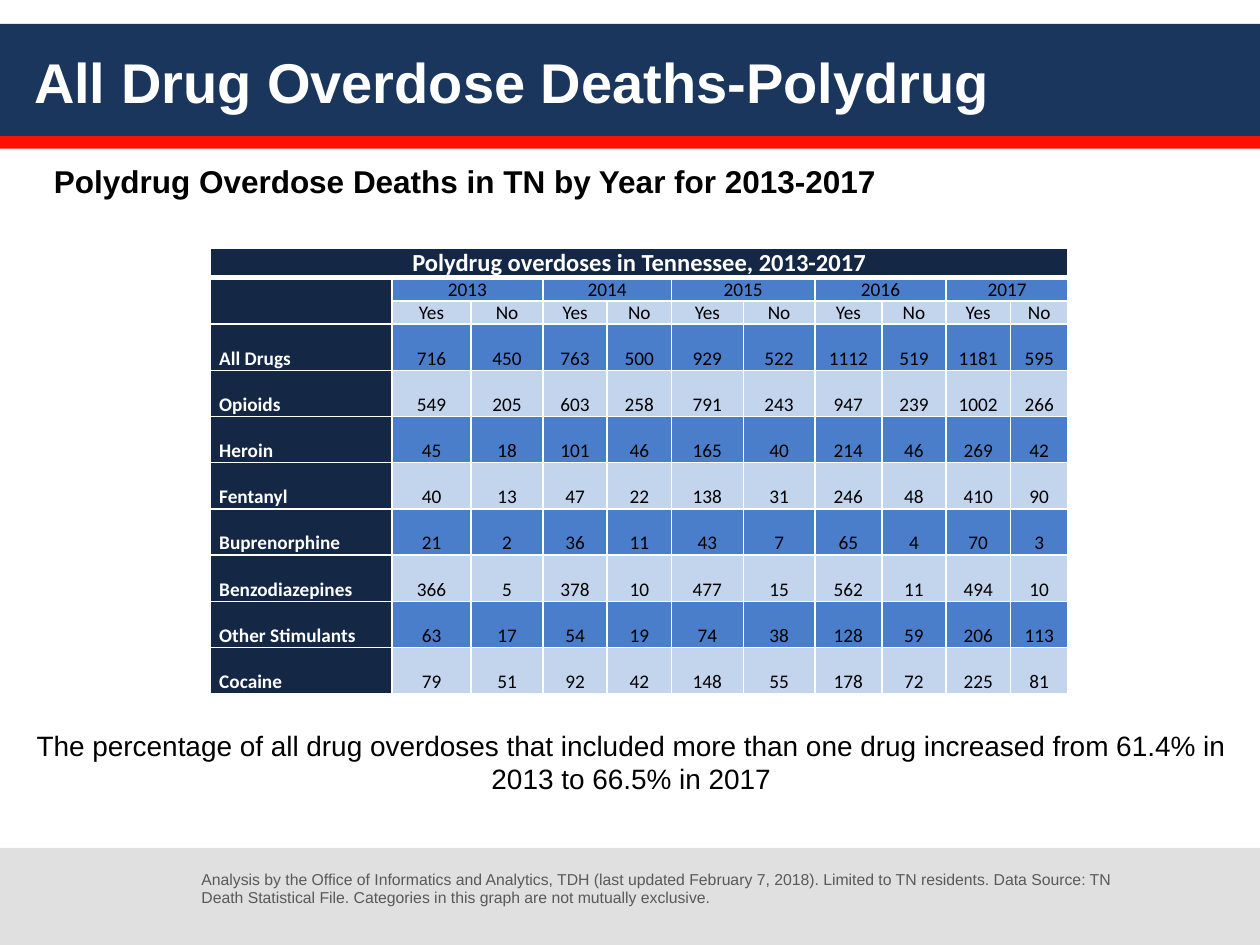
from lxml.etree import SubElement
from pptx import Presentation
from pptx.dml.color import RGBColor
from pptx.enum.shapes import MSO_SHAPE
from pptx.enum.text import MSO_ANCHOR as ANC, MSO_AUTO_SIZE as FIT, PP_ALIGN as AL
from pptx.oxml.ns import qn
from pptx.util import Inches, Pt

NAVY = RGBColor(0x1B, 0x36, 0x5D)
RED = RGBColor(0xFF, 0x0F, 0x00)
PALE = RGBColor(0xE0, 0xE0, 0xE0)
DARK = RGBColor(0x14, 0x28, 0x46)
BLUE = RGBColor(0x4A, 0x7E, 0xCA)
LIGHT = RGBColor(0xC3, 0xD4, 0xED)
GREY = RGBColor(0x59, 0x59, 0x59)
BLACK = RGBColor(0, 0, 0)
WHITE = RGBColor(0xFF, 0xFF, 0xFF)

prs = Presentation()
prs.slide_width, prs.slide_height = Inches(10), Inches(7.5)
COL, ROW = prs.slide_width / 100, prs.slide_height / 75


def box(x, y, w, h):
    return int(x * COL), int(y * ROW), int(w * COL), int(h * ROW)


def write(tf, text, align, color, **fmt):
    p = tf.paragraphs[0]
    p.alignment = align
    r = p.add_run()
    r.text = text
    r.font.color.rgb = color
    for key, value in fmt.items():
        setattr(r.font, key, value)


s = prs.slides.add_slide(prs.slide_layouts[5])
title = s.shapes.title

for y, h, color in [(1.9, 8.9, NAVY), (10.8, 1, RED), (67.3, 7.7, PALE)]:
    sp = s.shapes.add_shape(MSO_SHAPE.RECTANGLE, *box(0, y, 100, h))
    sp.shadow.inherit = False
    sp.fill.solid()
    sp.fill.fore_color.rgb = color
    sp.line.fill.background()

s.shapes._spTree.append(title._element)
title.left, title.top, title.width, title.height = box(1.7, 1.9, 96.7, 9)
tf = title.text_frame
tf.auto_size, tf.vertical_anchor = FIT.NONE, ANC.MIDDLE
write(tf, "All Drug Overdose Deaths-Polydrug", AL.LEFT, WHITE,
      name="Arial", size=Pt(32), bold=True)

texts = [
    ((3.3, 12.4, 75.8, 4), "Polydrug Overdose Deaths in TN by Year for 2013-2017",
     AL.LEFT, BLACK, 18, True),
    ((0.1, 57.3, 100, 6.4), "The percentage of all drug overdoses that included more than "
     "one drug increased from 61.4% in 2013 to 66.5% in 2017", AL.CENTER, BLACK, 16, False),
    ((15, 68.5, 75.8, 4), "Analysis by the Office of Informatics and Analytics, TDH (last "
     "updated February 7, 2018). Limited to TN residents. Data Source: TN Death Statistical "
     "File. Categories in this graph are not mutually exclusive.", AL.LEFT, GREY, 9, False),
]
for place, text, align, color, size, bold in texts:
    tf = s.shapes.add_textbox(*box(*place)).text_frame
    tf.word_wrap = True
    write(tf, text, align, color, name="Arial", size=Pt(size), bold=bold)

years = ["2013", "2014", "2015", "2016", "2017"]
rows = [
    ["Polydrug overdoses in Tennessee, 2013-2017"] + [""] * 10,
    [""] + [label for year in years for label in (year, "")],
    [""] + ["Yes", "No"] * len(years),
    ["All Drugs", 716, 450, 763, 500, 929, 522, 1112, 519, 1181, 595],
    ["Opioids", 549, 205, 603, 258, 791, 243, 947, 239, 1002, 266],
    ["Heroin", 45, 18, 101, 46, 165, 40, 214, 46, 269, 42],
    ["Fentanyl", 40, 13, 47, 22, 138, 31, 246, 48, 410, 90],
    ["Buprenorphine", 21, 2, 36, 11, 43, 7, 65, 4, 70, 3],
    ["Benzodiazepines", 366, 5, 378, 10, 477, 15, 562, 11, 494, 10],
    ["Other Stimulants", 63, 17, 54, 19, 74, 38, 128, 59, 206, 113],
    ["Cocaine", 79, 51, 92, 42, 148, 55, 178, 72, 225, 81],
]
widths = [14.4, 6.3, 5.7, 5.1, 5.1, 5.7, 5.7, 5.3, 5.1, 5.1, 4.6]
heights = [2.2, 1.8, 1.8] + [3.67] * 8
table = s.shapes.add_table(len(rows), len(widths),
                           *box(16.7, 19.7, sum(widths), sum(heights))).table
table.first_row = table.horz_banding = False
for column, w in zip(table.columns, widths):
    column.width = int(w * COL)
for row, h in zip(table.rows, heights):
    row.height = int(h * ROW)

for i, row in enumerate(rows):
    for j, value in enumerate(row):
        cell = table.cell(i, j)
        head = i == 0 or j == 0
        cell.margin_left = cell.margin_right = Inches(0.07)
        cell.margin_top = cell.margin_bottom = 0
        cell.vertical_anchor = ANC.TOP if i == 0 else ANC.BOTTOM
        for side in "LRTB":
            thick = (i, side) in [(0, "B"), (1, "T")]
            ln = SubElement(cell._tc.tcPr, qn(f"a:ln{side}"), w=str(Pt(3 if thick else 1)))
            SubElement(SubElement(ln, qn("a:solidFill")), qn("a:srgbClr"), val=str(WHITE))
        cell.fill.solid()
        cell.fill.fore_color.rgb = DARK if head else BLUE if i % 2 else LIGHT
        if value == "":
            SubElement(cell.text_frame.paragraphs[0]._p, qn("a:endParaRPr"), sz="1000")
        else:
            write(cell.text_frame, str(value), AL.LEFT if i and not j else AL.CENTER,
                  WHITE if head else BLACK, name="Calibri",
                  size=Pt(11 if i else 14), bold=head)

table.cell(0, 0).merge(table.cell(0, 10))
table.cell(1, 0).merge(table.cell(2, 0))
for j in range(1, 11, 2):
    table.cell(1, j).merge(table.cell(1, j + 1))

prs.save("out.pptx")
